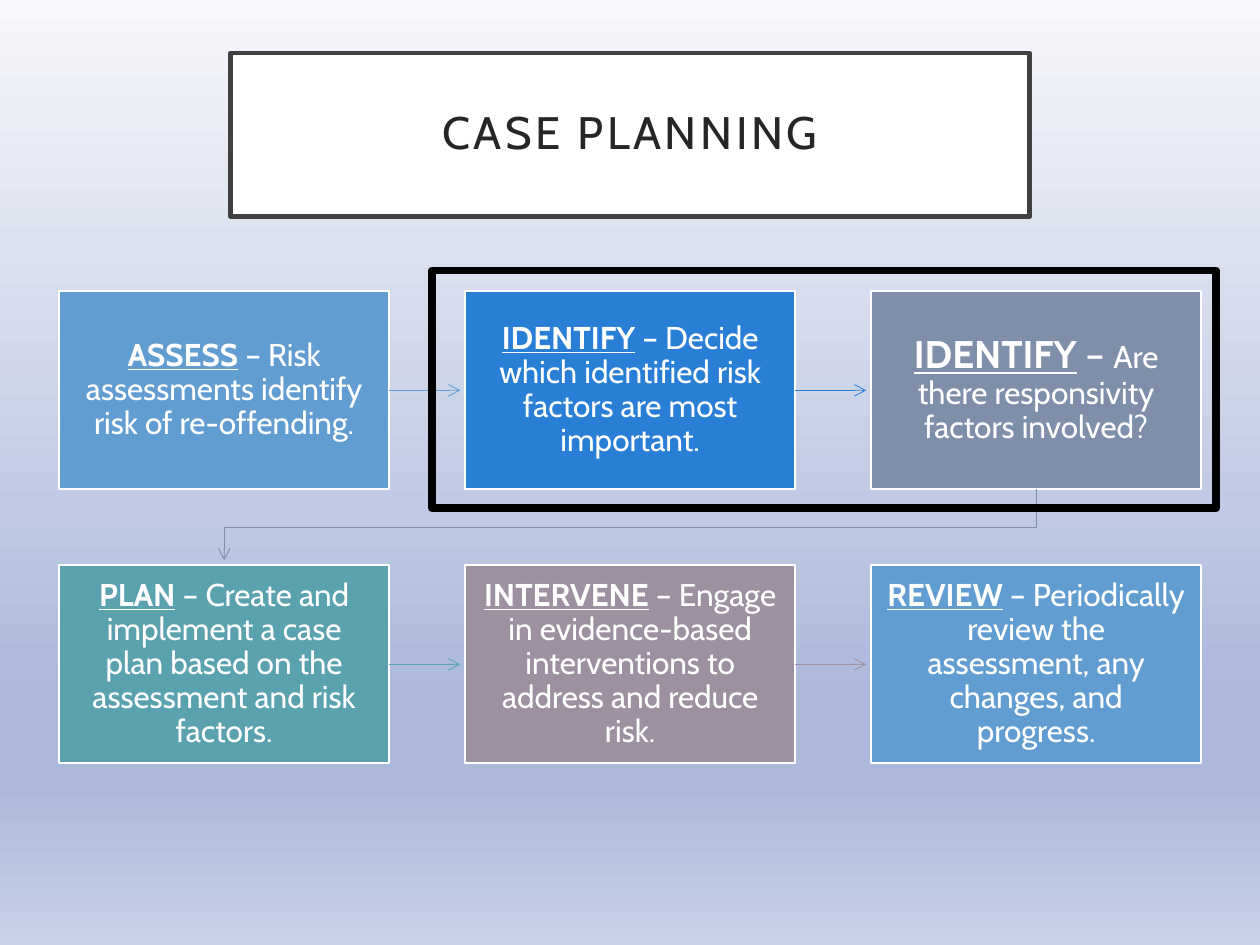
from dataclasses import dataclass

from lxml.etree import SubElement
from pptx import Presentation
from pptx.dml.color import RGBColor
from pptx.enum.shapes import MSO_CONNECTOR, MSO_SHAPE
from pptx.enum.text import MSO_ANCHOR, PP_ALIGN
from pptx.oxml.ns import qn
from pptx.util import Pt

COLORS = {
    "sky": "629DD1", "blue": "297FD5", "slate": "7F8FA9",
    "teal": "5AA2AE", "mauve": "9D90A0", "white": "FFFFFF",
    "black": "000000", "border": "404040", "title": "262626",
    "bg_top": "F6F7FB", "bg_mid": "ACB9DB", "bg_low": "C8D1E7",
}
BACKGROUND = [(0, "bg_top"), (74, "bg_mid"), (83, "bg_mid"), (100, "bg_low")]
FONT = "Cabin"
COLS = 3
LEFT, TOP = 33.8, 166.5
BOX_W, BOX_H = 188.6, 113.1
STEP_X, STEP_Y = 232, 156.6
ARROW_LEN = 40.6


@dataclass
class Step:
    heading: str
    dash: str
    body: str
    color: str
    lead_size: int = 18


STEPS = [
    Step("ASSESS", " – ", "Risk assessments identify risk of re-offending.", "sky"),
    Step("IDENTIFY", " – ", "Decide which identified risk factors are most important.", "blue"),
    Step("IDENTIFY", " – ", "Are there responsivity factors involved?", "slate", 22),
    Step("PLAN", " – ", "Create and implement a case plan based on the assessment and risk factors.", "teal"),
    Step("INTERVENE", " – ", "Engage in evidence-based interventions to address and reduce risk.", "mauve"),
    Step("REVIEW", " – ", "Periodically review the assessment, any changes, and progress.", "sky"),
]


def rgb(name: str) -> RGBColor:
    return RGBColor.from_string(COLORS[name])


def set_line(sp, color: str, width: float) -> None:
    sp.line.color.rgb = rgb(color)
    sp.line.width = Pt(width)


def set_margins(tf, inset: float) -> None:
    tf.margin_left = tf.margin_right = tf.margin_top = tf.margin_bottom = Pt(inset)
    tf.vertical_anchor = MSO_ANCHOR.MIDDLE
    tf.word_wrap = True


def format_run(r, size: float, color: str, strong: bool = False) -> None:
    r.font.name = FONT
    r.font.size = Pt(size)
    r.font.color.rgb = rgb(color)
    r.font.bold = strong
    r.font.underline = strong


def add_arrowhead(sp) -> None:
    SubElement(sp.line._get_or_add_ln(), qn("a:tailEnd"), type="arrow")


def paint_background(s) -> None:
    fill = s.background.fill
    fill.gradient()
    fill.gradient_angle = 270
    stops = s.background._cSld.find(".//" + qn("a:gsLst"))
    for gs in list(stops):
        stops.remove(gs)
    for pos, color in BACKGROUND:
        gs = SubElement(stops, qn("a:gs"), pos=str(pos * 1000))
        SubElement(gs, qn("a:srgbClr"), val=COLORS[color])


def add_title(s, text: str) -> None:
    sp = s.shapes.title
    sp.left, sp.top, sp.width, sp.height = Pt(131.8), Pt(30.2), Pt(456.5), Pt(93.6)
    sp.fill.solid()
    sp.fill.fore_color.rgb = rgb("white")
    set_line(sp, "border", 2.5)
    tf = sp.text_frame
    set_margins(tf, 14.4)
    tf.text = text
    p = tf.paragraphs[0]
    p.alignment = PP_ALIGN.CENTER
    p.line_spacing = 0.9
    r = p.runs[0]
    format_run(r, 26, "title")
    r.font._element.set("spc", "200")


def add_step(s, step: Step, x: float, y: float):
    sp = s.shapes.add_shape(MSO_SHAPE.RECTANGLE, Pt(x), Pt(y), Pt(BOX_W), Pt(BOX_H))
    sp.shadow.inherit = False
    sp.fill.solid()
    sp.fill.fore_color.rgb = rgb(step.color)
    set_line(sp, "white", 1)
    set_margins(sp.text_frame, 9.2)
    p = sp.text_frame.paragraphs[0]
    p.alignment = PP_ALIGN.CENTER
    p.line_spacing = 0.9
    parts = [(step.heading, step.lead_size, True), (step.dash, step.lead_size, False),
             (step.body, 18, False)]
    for text, size, strong in parts:
        r = p.add_run()
        r.text = text
        format_run(r, size, "white", strong)
    return sp


def add_arrow(s, box, color: str) -> None:
    x, y = box.left + box.width, box.top + box.height // 2
    cxn = s.shapes.add_connector(MSO_CONNECTOR.STRAIGHT, x, y, x + Pt(ARROW_LEN), y)
    cxn.begin_connect(box, 3)
    set_line(cxn, color, 0.5)
    add_arrowhead(cxn)
    SubElement(cxn._element.spPr, qn("a:effectLst"))


def add_row_link(s, start, end, color: str) -> None:
    x1, y1 = start.left + start.width // 2, start.top + start.height
    x2, y2 = end.left + end.width // 2, end.top - Pt(3)
    bend = (y1 + end.top) // 2
    fb = s.shapes.build_freeform(x1, y1)
    fb.add_line_segments([(x1, bend), (x2, bend), (x2, y2)], close=False)
    sp = fb.convert_to_shape()
    sp.shadow.inherit = False
    sp.fill.background()
    set_line(sp, color, 0.5)
    add_arrowhead(sp)


def add_frame(s) -> None:
    sp = s.shapes.add_shape(MSO_SHAPE.RECTANGLE, Pt(247), Pt(154.6), Pt(448), Pt(135.8))
    sp.shadow.inherit = False
    sp.fill.background()
    set_line(sp, "black", 4.5)
    SubElement(sp.line._get_or_add_ln(), qn("a:round"))


def main() -> None:
    prs = Presentation()
    prs.slide_width, prs.slide_height = Pt(720), Pt(540)
    s = prs.slides.add_slide(prs.slide_layouts[5])
    paint_background(s)
    add_title(s, "CASE PLANNING")
    boxes = []
    for i, step in enumerate(STEPS):
        row, col = divmod(i, COLS)
        boxes.append(add_step(s, step, LEFT + col * STEP_X, TOP + row * STEP_Y))
    for i, step in enumerate(STEPS[:-1]):
        if i % COLS < COLS - 1:
            add_arrow(s, boxes[i], step.color)
        else:
            add_row_link(s, boxes[i], boxes[i + 1], step.color)
    add_frame(s)
    prs.save("out.pptx")


if __name__ == "__main__":
    main()
